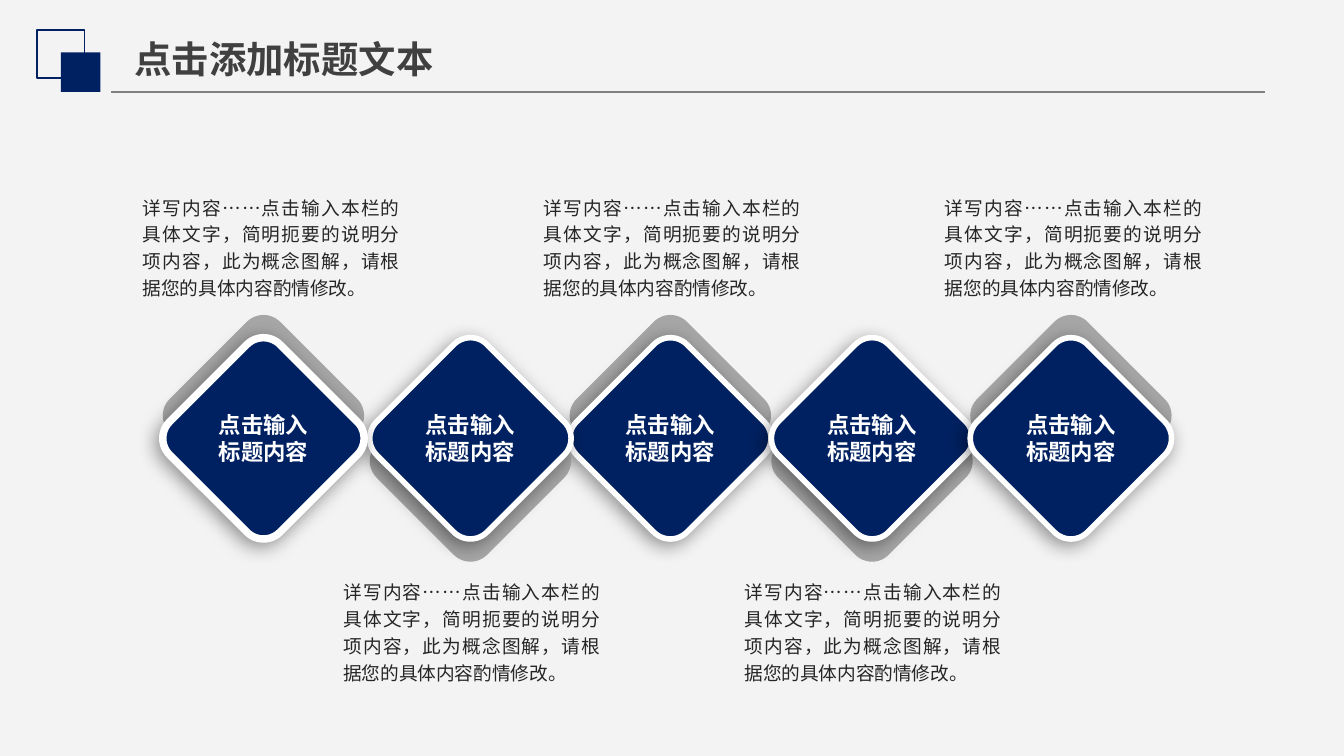
from lxml.etree import SubElement as Sub
from pptx import Presentation
from pptx.dml.color import RGBColor as Rgb
from pptx.enum.shapes import MSO_CONNECTOR as Wire, MSO_SHAPE as Kind
from pptx.enum.text import MSO_ANCHOR as Anchor, MSO_AUTO_SIZE as Auto, PP_ALIGN as Align
from pptx.oxml.ns import qn
from pptx.util import Cm, Pt

FONT = "Noto Sans CJK SC"
NAVY, GRAY, WHITE = "002161", "A6A6A6", "FFFFFF"
TITLE = "点击添加标题文本"
LABEL = "点击输入标题内容"
NOTE = "详写内容……点击输入本栏的具体文字，简明扼要的说明分项内容，此为概念图解，请根据您的具体内容酌情修改。"
ITEMS = [
    (4.98, "up", 4),
    (8.89, "down", 3),
    (12.67, "up", 3),
    (16.48, "down", 3),
    (20.24, "up", 3),
]
STACK = [2, 1, 0, 3, 4]
SIDES = {"up": (315, -0.43, 3.63), "down": (135, 0.43, 10.9)}
SIDE, TOP = 2.95, 6.81
NOTE_X, STEP = 2.7, 3.79


def color(code):
    return Rgb.from_string(code)


def add_text(text, box, size=10, ink="262626", bold=False, align=Align.LEFT,
             anchor=Anchor.TOP, inset=None, gap=None, wrap=True, grow=False):
    frame = slide.shapes.add_textbox(*map(Cm, box)).text_frame
    frame.word_wrap = wrap
    frame.auto_size = Auto.SHAPE_TO_FIT_TEXT if grow else Auto.NONE
    frame.vertical_anchor = anchor
    if inset is not None:
        frame.margin_left = frame.margin_right = Cm(inset)
        frame.margin_top = frame.margin_bottom = Cm(inset)
    para = frame.paragraphs[0]
    para.alignment = align
    if gap:
        para.line_spacing = gap
    run = para.add_run()
    run.text = text
    font = run.font
    font.name, font.size, font.bold = FONT, Pt(size), bold
    font.color.rgb = color(ink)
    Sub(run._r.get_or_add_rPr(), qn("a:ea"), typeface=FONT)


def add_box(home, kind, box, fill=None, line=None, width=1):
    shape = home.add_shape(kind, *map(Cm, box))
    shape.shadow.inherit = False
    if fill:
        shape.fill.solid()
        shape.fill.fore_color.rgb = color(fill)
    else:
        shape.fill.background()
    if line:
        shape.line.color.rgb = color(line)
        shape.line.width = Pt(width)
    else:
        shape.line.fill.background()
    return shape


def add_tile(home, mid, top, turn, **look):
    tile = add_box(home, Kind.ROUNDED_RECTANGLE, (mid - SIDE / 2, top, SIDE, SIDE), **look)
    tile.adjustments[0] = 0.15
    tile.rotation = turn
    return tile


def add_shade(shape):
    list_ = shape._element.spPr.find(qn("a:effectLst"))
    shade = Sub(list_, qn("a:outerShdw"), blurRad=str(Pt(10)), dist=str(Pt(3)),
                dir=str(135 * 60000), algn="tr", rotWithShape="0")
    tint = Sub(shade, qn("a:srgbClr"), val="000000")
    Sub(tint, qn("a:alpha"), val="40000")


deck = Presentation()
deck.slide_width, deck.slide_height = Cm(25.4), Cm(14.29)
slide = deck.slides.add_slide(deck.slide_layouts[6])
slide.background.fill.solid()
slide.background.fill.fore_color.rgb = color("F3F3F3")

rule = slide.shapes.add_connector(Wire.STRAIGHT, Cm(2.1), Cm(1.74), Cm(23.9), Cm(1.74))
rule.line.color.rgb = color("808080")
rule.line.width = Pt(0.75)
Sub(rule._element.spPr, qn("a:effectLst"))

mark = slide.shapes.add_group_shape().shapes
add_box(mark, Kind.RECTANGLE, (0.7, 0.57, 0.9, 0.9), line=NAVY)
add_box(mark, Kind.RECTANGLE, (1.15, 0.99, 0.75, 0.75), fill=NAVY)
add_text(TITLE, (2.29, 0.56, 6.22, 1.11), size=20, ink="404040", bold=True,
         wrap=False, grow=True)

for spot in STACK:
    mid, side, width = ITEMS[spot]
    turn, shift, _ = SIDES[side]
    pair = slide.shapes.add_group_shape().shapes
    add_tile(pair, mid, TOP + shift, turn, fill=GRAY)
    add_shade(add_tile(pair, mid, TOP, turn, fill=NAVY, line=WHITE, width=width))

for mid, _, _ in ITEMS:
    add_text(LABEL, (mid - 1.26, 8, 2.52, 0.56), size=12, ink=WHITE, bold=True,
             align=Align.CENTER, anchor=Anchor.MIDDLE)

for spot, (_, side, _) in enumerate(ITEMS):
    add_text(NOTE, (NOTE_X + STEP * spot, SIDES[side][2], 4.85, 2.06),
             align=Align.JUSTIFY, inset=0, gap=1.2, grow=True)

deck.save("out.pptx")
